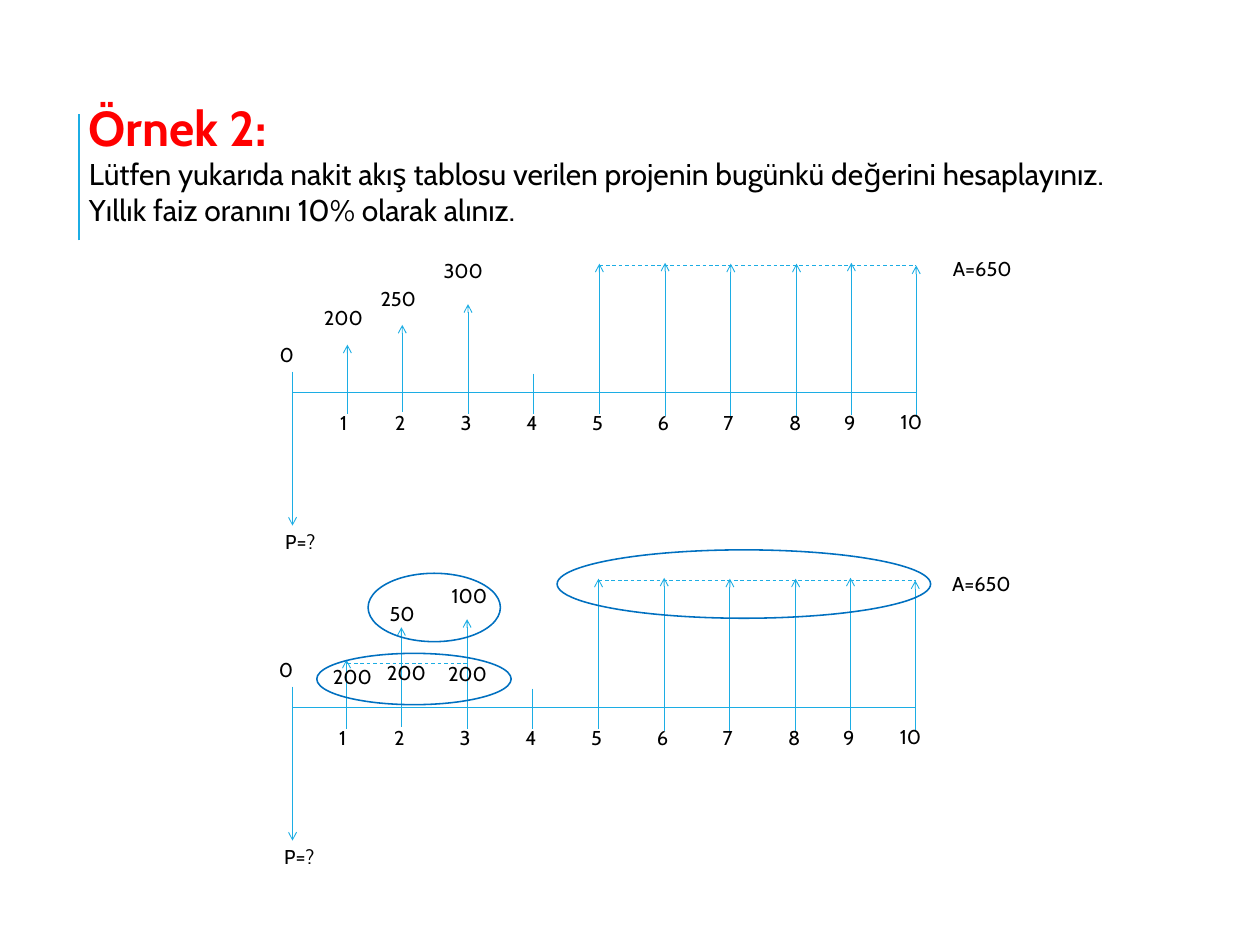
from dataclasses import dataclass

from lxml import etree
from pptx import Presentation
from pptx import util as u
from pptx.dml.color import RGBColor
from pptx.enum import dml, shapes, text
from pptx.oxml import ns

CYAN = RGBColor(0x1C, 0xAD, 0xE4)
BLUE = RGBColor(0x00, 0x70, 0xC0)
RED = RGBColor(0xFF, 0x00, 0x00)
BLACK = RGBColor(0x00, 0x00, 0x00)
FONT = "Cabin"

AXIS_START, AXIS_END = 3.25, 10.18
TICK_LENGTH = 0.45
ANNUITY_RISE = 1.41


@dataclass(frozen=True)
class Period:
    x: float
    tick_rise: float  # height of the tick's top above the axis
    flow_base: float = 0  # start of the cash flow arrow, above the axis
    flow_rise: float = 0  # tip of the cash flow arrow; 0 means no flow


@dataclass(frozen=True)
class Label:
    words: str
    left: float
    top: float
    width: float = 0.73


@dataclass(frozen=True)
class Diagram:
    axis_y: float
    shift: float  # sideways offset of periods and labels
    early_rises: tuple[float, float, float]
    amounts: tuple[Label, ...]


@dataclass(frozen=True)
class Ring:
    left: float
    top: float
    width: float
    height: float


EARLY_PERIODS = (Period(3.86, 0.21), Period(4.47, 0.23), Period(5.2, 0.21))
LATE_PERIODS = (
    Period(5.93, 0.21),
    Period(6.66, 0.21, -0.01, 1.43),
    Period(7.39, 0.19, 0, 1.44),
    Period(8.12, 0.19, -0.01, 1.43),
    Period(8.85, 0.18, -0.01, 1.43),
    Period(9.46, 0.2, 0.01, 1.44),
    Period(10.18, 0.18, -0.03, 1.41),
)

DIAGRAMS = (
    Diagram(4.36, 0, (0.53, 0.75, 0.98), (
        Label("200", 3.5, 3.35), Label("250", 4.13, 3.14), Label("300", 4.83, 2.82))),
    Diagram(7.86, -0.01, (0.53, 0.89, 0.98), (
        Label("200", 3.6, 7.33), Label("50", 4.23, 6.63), Label("100", 4.92, 6.43))),
)

SPLIT_AMOUNTS = (Label("200", 4.2, 7.29), Label("200", 4.88, 7.3))
RINGS = (
    Ring(3.52, 7.26, 2.16, 0.57),
    Ring(4.09, 6.37, 1.47, 0.76),
    Ring(6.19, 6.11, 4.15, 0.76),
)


def draw_line(parent, x1: float, y1: float, x2: float, y2: float,
              weight: float = 0.75, dashed: bool = False, arrow: bool = False) -> None:
    line = parent.shapes.add_connector(
        shapes.MSO_CONNECTOR.STRAIGHT,
        u.Inches(x1), u.Inches(y1), u.Inches(x2), u.Inches(y2))
    line.line.color.rgb = CYAN
    line.line.width = u.Pt(weight)
    if dashed:
        line.line.dash_style = dml.MSO_LINE.DASH
    properties = line._element.spPr
    if arrow:
        outline = properties.find(ns.qn("a:ln"))
        etree.SubElement(outline, ns.qn("a:tailEnd"), type="arrow")
    etree.SubElement(properties, ns.qn("a:effectLst"))


def add_frame(parent, left: float, top: float, width: float, height: float):
    frame = parent.shapes.add_textbox(
        u.Inches(left), u.Inches(top), u.Inches(width), u.Inches(height)).text_frame
    frame.word_wrap = True
    frame.auto_size = text.MSO_AUTO_SIZE.SHAPE_TO_FIT_TEXT
    return frame


def add_run(paragraph, words: str, size: float, color: RGBColor, bold: bool = False) -> None:
    run = paragraph.add_run()
    run.text = words
    run.font.name = FONT
    run.font.size = u.Pt(size)
    run.font.bold = bold
    run.font.color.rgb = color


def draw_label(parent, label: Label) -> None:
    frame = add_frame(parent, label.left, label.top, label.width, 0.37)
    add_run(frame.paragraphs[0], label.words, 16, BLACK)


def draw_ring(parent, ring: Ring) -> None:
    oval = parent.shapes.add_shape(
        shapes.MSO_SHAPE.OVAL, u.Inches(ring.left), u.Inches(ring.top),
        u.Inches(ring.width), u.Inches(ring.height))
    oval.shadow.inherit = False
    oval.fill.background()
    oval.line.color.rgb = BLUE
    oval.line.width = u.Pt(1.25)


def draw_diagram(slide, diagram: Diagram) -> None:
    group = slide.shapes.add_group_shape()
    axis, shift = diagram.axis_y, diagram.shift
    early = tuple(Period(period.x, period.tick_rise, 0, rise)
                  for period, rise in zip(EARLY_PERIODS, diagram.early_rises))
    periods = early + LATE_PERIODS

    # Axis, start tick and the unknown present value
    draw_line(group, AXIS_START, axis, AXIS_END, axis)
    draw_line(group, AXIS_START, axis - 0.23, AXIS_START, axis + 0.22)
    draw_line(group, AXIS_START, axis, AXIS_START, axis + 1.48, arrow=True)

    # Period ticks, cash flows and numbers
    for number, period in enumerate(periods, start=1):
        x = period.x + shift
        tick_top = axis - period.tick_rise
        draw_line(group, x, tick_top, x, tick_top + TICK_LENGTH)
        if period.flow_rise:
            draw_line(group, x, axis - period.flow_base,
                      x, axis - period.flow_rise, arrow=True)
        if number < len(periods):
            draw_label(group, Label(str(number), x - 0.18, axis + 0.15, 0.36))
        else:
            draw_label(group, Label(str(number), x - 0.27, axis + 0.14, 0.61))

    # Annuity level and amounts
    level = axis - ANNUITY_RISE
    draw_line(group, LATE_PERIODS[1].x + shift, level, AXIS_END, level, dashed=True)
    for amount in diagram.amounts:
        draw_label(group, amount)
    draw_label(group, Label("A=650", 10.49 + shift, axis - 1.56, 1.09))
    draw_label(group, Label("0", 3.01 + shift, axis - 0.6, 0.36))
    draw_label(group, Label("P=?", 3.07 + shift, axis + 1.48, 0.97))


def draw_question(slide) -> None:
    draw_line(slide, 0.88, 2.67, 0.88, 1.27, weight=1.5)
    frame = add_frame(slide, 0.89, 1.03, 12.22, 1.57)
    add_run(frame.paragraphs[0], "Örnek 2:", 39.2, RED, bold=True)
    question = frame.add_paragraph()
    add_run(question, "Lütfen yukarıda nakit akış tablosu verilen projenin "
            "bugünkü değerini hesaplayınız.", 24, BLACK)
    question.add_line_break()
    add_run(question, "Yıllık faiz oranını 10% olarak alınız.", 24, BLACK)


def main() -> None:
    presentation = Presentation()
    presentation.slide_width = u.Inches(14)
    presentation.slide_height = u.Inches(10.5)
    slide = presentation.slides.add_slide(presentation.slide_layouts[6])

    draw_question(slide)
    for diagram in DIAGRAMS:
        draw_diagram(slide, diagram)

    # Early flows split into a level series and a remainder
    draw_line(slide, EARLY_PERIODS[0].x, 7.37, EARLY_PERIODS[-1].x, 7.37, dashed=True)
    for amount in SPLIT_AMOUNTS:
        draw_label(slide, amount)
    for ring in RINGS:
        draw_ring(slide, ring)

    presentation.save("out.pptx")


if __name__ == "__main__":
    main()
